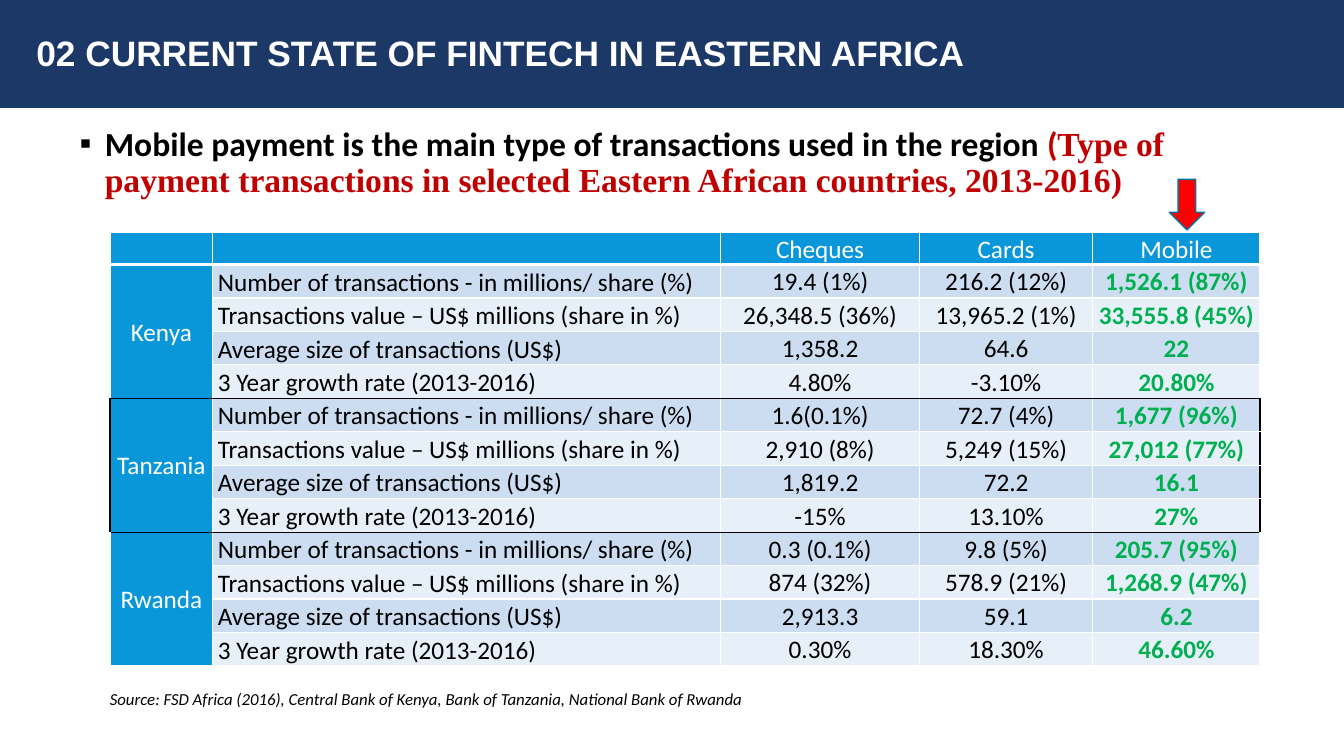
from lxml.etree import SubElement
from pptx import Presentation
from pptx.dml.color import RGBColor
from pptx.enum.shapes import MSO_SHAPE
from pptx.enum.text import MSO_ANCHOR, MSO_AUTO_SIZE, PP_ALIGN
from pptx.oxml import parse_xml
from pptx.oxml.ns import nsdecls, qn
from pptx.util import Inches, Pt

NAVY, BLUE, EDGE, RED, WINE = "1C3867", "0A97D9", "0770A1", "FF0000", "C00000"
GREEN, WHITE, BLACK = "00B050", "FFFFFF", "000000"
BANDS = ("CCDDF1", "E7EFF8")

HEADS = ("", "", "Cheques", "Cards", "Mobile")
ITEMS = (
    "Number of transactions - in millions/ share (%)",
    "Transactions value – US$ millions (share in %)",
    "Average size of transactions (US$)",
    "3 Year growth rate (2013-2016)",
)
LANDS = {
    "Kenya": (
        ("19.4 (1%)", "216.2 (12%)", "1,526.1 (87%)"),
        ("26,348.5 (36%)", "13,965.2 (1%)", "33,555.8 (45%)"),
        ("1,358.2", "64.6", "22"),
        ("4.80%", "-3.10%", "20.80%"),
    ),
    "Tanzania": (
        ("1.6(0.1%)", "72.7 (4%)", "1,677 (96%)"),
        ("2,910 (8%)", "5,249 (15%)", "27,012 (77%)"),
        ("1,819.2", "72.2", "16.1"),
        ("-15%", "13.10%", "27%"),
    ),
    "Rwanda": (
        ("0.3 (0.1%)", "9.8 (5%)", "205.7 (95%)"),
        ("874 (32%)", "578.9 (21%)", "1,268.9 (47%)"),
        ("2,913.3", "59.1", "6.2"),
        ("0.30%", "18.30%", "46.60%"),
    ),
}
STEP = len(ITEMS)
FRAME = range(STEP + 1, 2 * STEP + 1)


def hue(code):
    return RGBColor.from_string(code)


def put(item, **vals):
    for key, val in vals.items():
        setattr(item, key, val)


class Deck:
    """Holds the look and the current slide on a grid of 100 columns and 100 rows."""

    base = {"name": "Calibri", "size": Pt(18), "bold": False, "italic": False}

    def __init__(self):
        self.show = Presentation()
        put(self.show, slide_width=Inches(13.33), slide_height=Inches(7.5))
        self.slide = self.show.slides.add_slide(self.show.slide_layouts[1])

    def x(self, cols):
        return round(self.show.slide_width * cols / 100)

    def y(self, rows):
        return round(self.show.slide_height * rows / 100)

    def area(self, left, top, wide, high):
        return self.x(left), self.y(top), self.x(wide), self.y(high)

    def run(self, para, text, tint=BLACK, **font):
        run = para.add_run()
        run.text = text
        put(run.font, **{**self.base, **font})
        run.font.color.rgb = hue(tint)

    def shape(self, kind, box, fill, line=None):
        item = self.slide.shapes.add_shape(kind, *self.area(*box))
        item.shadow.inherit = False
        item.fill.solid()
        item.fill.fore_color.rgb = hue(fill)
        if line:
            item.line.color.rgb = hue(line)
            item.line.width = Pt(1)
        else:
            item.line.fill.background()
        return item

    def place(self, item, box, anchor):
        left, top, wide, high = self.area(*box)
        put(item, left=left, top=top, width=wide, height=high)
        frame = item.text_frame
        put(frame, word_wrap=True, auto_size=MSO_AUTO_SIZE.NONE, vertical_anchor=anchor)
        para = frame.paragraphs[0]
        put(para, alignment=PP_ALIGN.LEFT, line_spacing=0.9, space_before=Pt(0))
        return para

    def title(self, text, box, band):
        item = self.slide.shapes.title
        para = self.place(item, box, MSO_ANCHOR.MIDDLE)
        self.run(para, text, WHITE, name="Arial", size=Pt(25.2), bold=True)
        bar = self.shape(MSO_SHAPE.RECTANGLE, band, NAVY)
        item.element.addprevious(bar.element)

    def point(self, parts, box):
        para = self.place(self.slide.placeholders[1], box, MSO_ANCHOR.TOP)
        props = para._p.get_or_add_pPr()
        props.set("marL", str(Inches(0.42)))
        props.set("indent", str(Inches(-0.25)))
        SubElement(props, qn("a:buFont"), typeface="Arial")
        SubElement(props, qn("a:buChar"), char="▪")
        for text, tint, name in parts:
            self.run(para, text, tint, name=name, size=Pt(24), bold=True)

    def note(self, text, box):
        item = self.slide.shapes.add_textbox(*self.area(*box))
        item.text_frame.word_wrap = True
        self.run(item.text_frame.paragraphs[0], text, size=Pt(12), italic=True)

    def edge(self, cell, sides):
        props = cell._tc.get_or_add_tcPr()
        for spot, (side, (tint, wide)) in enumerate(sides.items()):
            props.insert(spot, parse_xml(
                f'<a:ln{side} {nsdecls("a")} w="{Pt(wide)}"><a:solidFill>'
                f'<a:srgbClr val="{tint}"/></a:solidFill></a:ln{side}>'))

    def cell(self, cell, text, fill, tint, bold, left):
        anchor = MSO_ANCHOR.BOTTOM if left else MSO_ANCHOR.MIDDLE
        put(cell, margin_left=Inches(0.05), margin_right=Inches(0.05),
            margin_top=0, margin_bottom=0, vertical_anchor=anchor)
        cell.fill.solid()
        cell.fill.fore_color.rgb = hue(fill)
        para = cell.text_frame.paragraphs[0]
        put(para, line_spacing=1.07, alignment=PP_ALIGN.LEFT if left else PP_ALIGN.CENTER)
        if text:
            self.run(para, text, tint, bold=bold)

    def table(self, data, spot, wides, highs):
        box = (*spot, sum(wides), sum(highs))
        grid = self.slide.shapes.add_table(len(data), len(wides), *self.area(*box)).table
        grid.horz_banding = False
        for col, wide in zip(grid.columns, wides):
            col.width = self.x(wide)
        for row, high in zip(grid.rows, highs):
            row.height = self.y(high)
        for top in range(1, len(data), STEP):
            grid.cell(top, 0).merge(grid.cell(top + STEP - 1, 0))
        final = len(wides) - 1
        for r, row in enumerate(data):
            for c, text in enumerate(row):
                cell = grid.cell(r, c)
                head = r == 0 or c == 0
                best = c == final and not head
                tint = WHITE if head else GREEN if best else BLACK
                fill = BLUE if head else BANDS[(r - 1) % 2]
                self.cell(cell, text, fill, tint, best, c == 1 and not head)
                last = r + STEP - 1 if cell.is_merge_origin else r
                dark = {
                    "L": c == 0 and r in FRAME,
                    "R": c == final and r in FRAME,
                    "T": r in (FRAME.start, FRAME.stop),
                    "B": last in (FRAME.start - 1, FRAME.stop - 1),
                }
                self.edge(cell, {
                    side: (BLACK if on else WHITE, 3 if r == 0 and side == "B" else 1)
                    for side, on in dark.items()})


def main():
    deck = Deck()
    deck.title("02 CURRENT STATE OF FINTECH IN EASTERN AFRICA",
               (1.95, 2.8, 96.83, 8.93), (0, 0, 100, 14.27))
    deck.point((
        ("Mobile payment is the main type of transactions used in the region ", BLACK, "Calibri"),
        ("(", WINE, "Calibri"),
        ("Type of payment transactions in selected Eastern African countries, 2013-2016)",
         WINE, "Times New Roman"),
    ), (3.9, 16.13, 92.1, 12))
    deck.note("Source: FSD Africa (2016), Central Bank of Kenya, Bank of Tanzania, "
              "National Bank of Rwanda", (7.43, 90.4, 55.5, 4))
    data = [HEADS]
    for land, rows in LANDS.items():
        for n, (item, vals) in enumerate(zip(ITEMS, rows)):
            data.append(("" if n else land, item, *vals))
    deck.table(data, (8.18, 30.7), (7.65, 37.8, 14.78, 12.9, 12.45),
               [4.26] + [4.43] * (len(data) - 1))
    deck.shape(MSO_SHAPE.DOWN_ARROW, (87, 23.73, 2.63, 6.67), RED, EDGE)
    deck.show.save("out.pptx")


if __name__ == "__main__":
    main()
